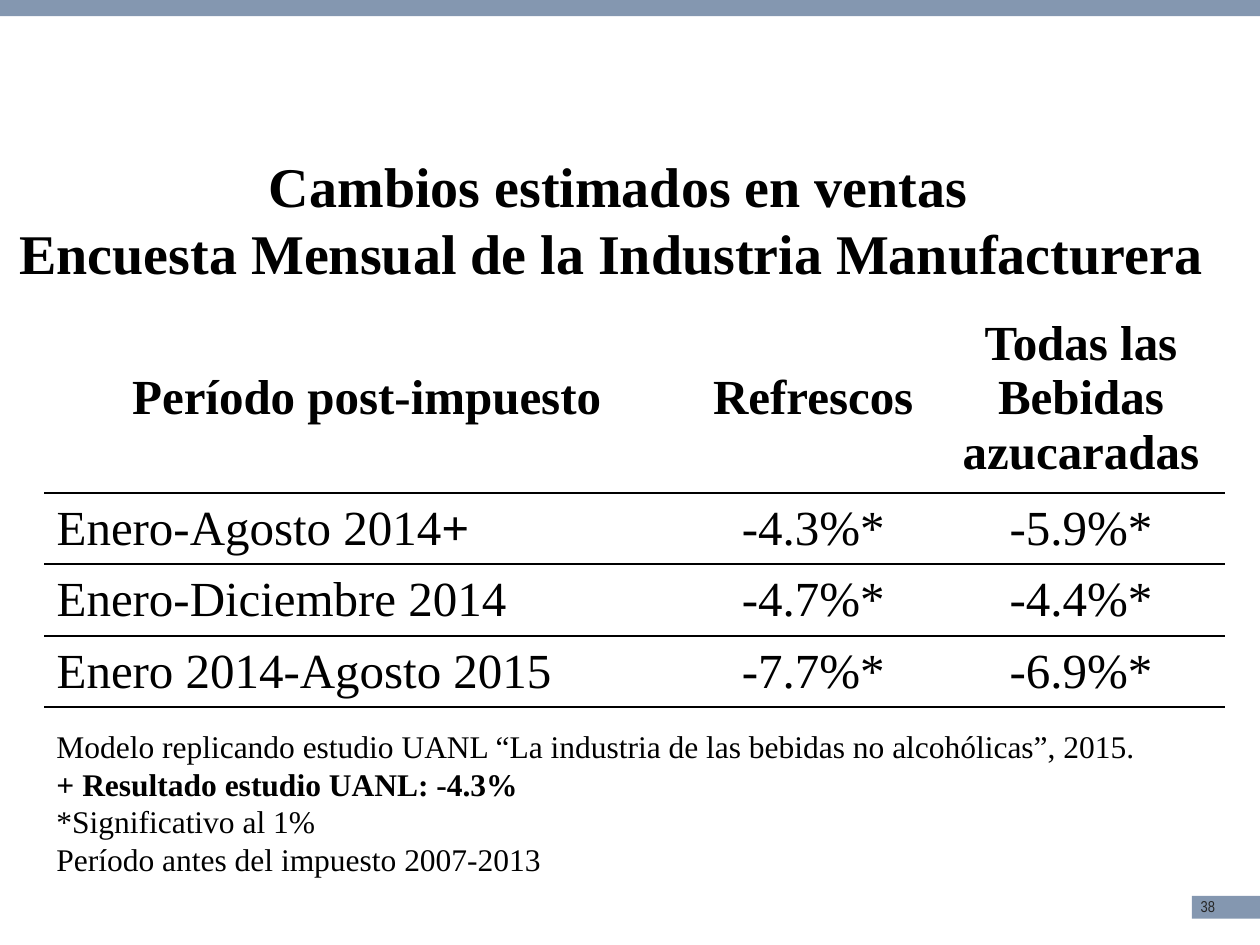
from lxml import etree
from pptx import Presentation
from pptx.dml.color import RGBColor
from pptx.enum import shapes, text
from pptx.oxml import ns
from pptx.util import Pt

BLACK = RGBColor(0x00, 0x00, 0x00)
GREY = RGBColor(0x26, 0x26, 0x26)
BLUE = RGBColor(0x84, 0x97, 0xB0)
SERIF = "Times New Roman"
NARROW = "Arial Narrow"
CENTER = text.PP_ALIGN.CENTER
LEFT = text.PP_ALIGN.LEFT
PLAIN_STYLE = "{2D5ABB26-0587-4C30-8999-92F81FD0307C}"  # no style, no grid

TITLE = [
    [("Cambios estimados en ventas", True)],
    [("Encuesta Mensual de la Industria Manufacturera ", True)],
]
HEAD = ["Período post-impuesto", "Refrescos", "Todas las Bebidas azucaradas"]
ROWS = [
    ([("Enero-Agosto 2014", False), ("+", True)], "-4.3%*", "-5.9%*"),
    ([("Enero-Diciembre 2014", False)], "-4.7%*", "-4.4%*"),
    ([("Enero 2014-Agosto 2015", False)], "-7.7%*", "-6.9%*"),
]
NOTES = [
    [("Modelo replicando estudio UANL “La industria de las bebidas no "
      "alcohólicas”, 2015.", False)],
    [("+ Resultado estudio UANL: -4.3%", True)],
    [("*Significativo al 1%", False)],
    [("Período antes del impuesto 2007-2013", False)],
]
WIDTHS = [368.6, 141.8, 164.2]
HEIGHTS = [108, 40.8, 40.8, 40.8]
RULED = (0, 1, 3)  # rows with a line below


def write(frame, paras, size, align=LEFT, face=SERIF, color=BLACK):
    """Fill a text frame; each paragraph is a list of (words, bold) runs."""
    for i, runs in enumerate(paras):
        para = frame.paragraphs[0] if i == 0 else frame.add_paragraph()
        para.alignment = align
        para.space_before = Pt(0)
        for words, bold in runs:
            run = para.add_run()
            run.text = words
            font = run.font
            font.name, font.size, font.bold = face, Pt(size), bold
            font.color.rgb = color


def add_band(slide, *box):
    band = slide.shapes.add_shape(
        shapes.MSO_SHAPE.RECTANGLE, *map(Pt, box))
    band.shadow.inherit = False
    band.fill.solid()
    band.fill.fore_color.rgb = BLUE
    band.line.fill.background()


def add_text(slide, box, paras, size, wrap=True, **look):
    frame = slide.shapes.add_textbox(*map(Pt, box)).text_frame
    frame.word_wrap = wrap
    write(frame, paras, size, **look)


def set_title(slide):
    title = slide.shapes.title
    title.left, title.top, title.width, title.height = map(
        Pt, (0.7, 82.8, 705.6, 85))
    frame = title.text_frame
    frame.word_wrap = True
    frame.auto_size = text.MSO_AUTO_SIZE.NONE
    frame.vertical_anchor = text.MSO_ANCHOR.TOP
    write(frame, TITLE, 32, CENTER)


def rule(cell, side, width=1.5):
    """Draw a cell border; side is lnT or lnB."""
    props = cell._tc.get_or_add_tcPr()
    line = etree.Element(ns.qn("a:" + side), w=str(Pt(width)))
    fill = etree.SubElement(line, ns.qn("a:solidFill"))
    etree.SubElement(fill, ns.qn("a:srgbClr"), val=str(BLACK))
    props.insert(0, line)


def add_grid(slide):
    data = [[[(head, True)] for head in HEAD]]
    data += [[label, [(soda, False)], [(total, False)]]
             for label, soda, total in ROWS]
    table = slide.shapes.add_table(
        len(data), len(HEAD), Pt(25.2), Pt(173.5),
        Pt(sum(WIDTHS)), Pt(sum(HEIGHTS))).table
    table.first_row = table.horz_banding = False
    table._tbl.tblPr.find(ns.qn("a:tableStyleId")).text = PLAIN_STYLE
    for col, width in zip(table.columns, WIDTHS):
        col.width = Pt(width)
    for r, row in enumerate(data):
        table.rows[r].height = Pt(HEIGHTS[r])
        for c, runs in enumerate(row):
            cell = table.cell(r, c)
            cell.vertical_anchor = text.MSO_ANCHOR.MIDDLE
            cell.fill.background()
            write(cell.text_frame, [runs], 28,
                  LEFT if r and c == 0 else CENTER)
            if r in RULED:
                rule(cell, "lnB")
            if r - 1 in RULED:
                rule(cell, "lnT")


def main():
    deck = Presentation()
    deck.slide_width, deck.slide_height = Pt(720), Pt(540)
    slide = deck.slides.add_slide(deck.slide_layouts[5])
    add_band(slide, 681.1, 511.9, 38.9, 13)
    add_text(slide, (679, 509, 28, 18), [[("38", False)]], 9,
             wrap=False, face=NARROW, color=GREY)
    add_band(slide, 0, -1.5, 720, 10.8)
    add_grid(slide)
    set_title(slide)
    add_text(slide, (25.2, 411.8, 640.8, 94.3), NOTES, 18)
    deck.save("out.pptx")


if __name__ == "__main__":
    main()
